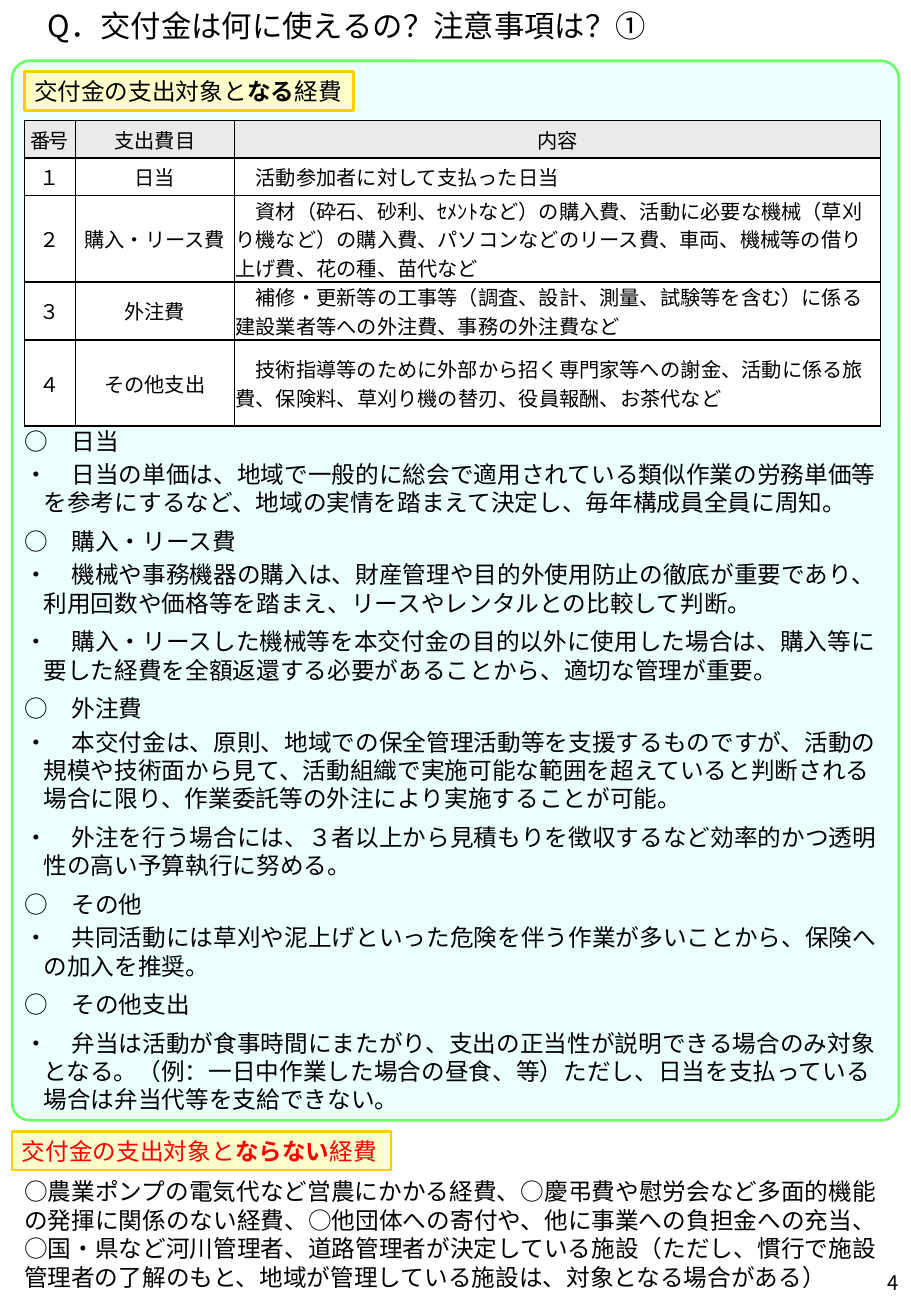
from dataclasses import dataclass

from lxml.etree import SubElement
from pptx import Presentation
from pptx.dml.color import RGBColor
from pptx.enum.shapes import MSO_SHAPE as SHAPE
from pptx.enum.text import MSO_ANCHOR as ANCHOR, MSO_AUTO_SIZE as AUTO, PP_ALIGN as ALIGN
from pptx.oxml.ns import qn
from pptx.util import Inches, Pt

TITLE = "Q．交付金は何に使えるの？注意事項は？①"
PAGE = "4"
LABELS = [
    (0.2, 0.59, 2.71, "black", ("交付金の支出対象と", "なる", "経費")),
    (0.1, 9.31, 3.12, "red", ("交付金の支出対象と", "ならない", "経費")),
]
COSTS = [
    ("番号", "支出費目", "内容"),
    ("１", "日当", "　活動参加者に対して支払った日当"),
    ("２", "購入・リース費", "　資材（砕石、砂利、ｾﾒﾝﾄなど）の購入費、活動に必要な機械（草刈り機など）の購入費、パソコンなどのリース費、車両、機械等の借り上げ費、花の種、苗代など"),
    ("３", "外注費", "　補修・更新等の工事等（調査、設計、測量、試験等を含む）に係る建設業者等への外注費、事務の外注費など"),
    ("４", "その他支出", "　技術指導等のために外部から招く専門家等への謝金、活動に係る旅費、保険料、草刈り機の替刃、役員報酬、お茶代など"),
]
COL_WIDTHS = [0.42, 1.31, 5.32]
ROW_HEIGHTS = [0.31, 0.31, 0.71, 0.47, 0.71]
NOTES = [
    ("○　日当", 3),
    ("・　日当の単価は、地域で一般的に総会で適用されている類似作業の労務単価等を参考にするなど、地域の実情を踏まえて決定し、毎年構成員全員に周知。", 6),
    ("○　購入・リース費", 3),
    ("・　機械や事務機器の購入は、財産管理や目的外使用防止の徹底が重要であり、利用回数や価格等を踏まえ、リースやレンタルとの比較して判断。", 6),
    ("・　購入・リースした機械等を本交付金の目的以外に使用した場合は、購入等に要した経費を全額返還する必要があることから、適切な管理が重要。", 6),
    ("○　外注費", 3),
    ("・　本交付金は、原則、地域での保全管理活動等を支援するものですが、活動の規模や技術面から見て、活動組織で実施可能な範囲を超えていると判断される場合に限り、作業委託等の外注により実施することが可能。", 6),
    ("・　外注を行う場合には、３者以上から見積もりを徴収するなど効率的かつ透明性の高い予算執行に努める。", 6),
    ("○　その他", 3),
    ("・　共同活動には草刈や泥上げといった危険を伴う作業が多いことから、保険への加入を推奨。", 6),
    ("○　その他支出", 6),
    ("・　弁当は活動が食事時間にまたがり、支出の正当性が説明できる場合のみ対象となる。（例：一日中作業した場合の昼食、等）ただし、日当を支払っている場合は弁当代等を支給できない。", 6),
]
EXCLUDED = "○農業ポンプの電気代など営農にかかる経費、○慶弔費や慰労会など多面的機能の発揮に関係のない経費、○他団体への寄付や、他に事業への負担金への充当、○国・県など河川管理者、道路管理者が決定している施設（ただし、慣行で施設管理者の了解のもと、地域が管理している施設は、対象となる場合がある）"


@dataclass(frozen=True)
class Theme:
    font: str = "Noto Sans CJK JP"
    black: str = "000000"
    red: str = "FF0000"
    white: str = "FFFFFF"
    header: str = "EAEAEA"
    panel: str = "EBFFFF"
    panel_line: str = "66FF66"
    label: str = "FFFFCC"
    label_line: str = "FFCC00"
    title_size: float = 18
    body_size: float = 14
    table_size: float = 12
    leading: float = 16.8


T = Theme()


def rgb(color):
    return RGBColor.from_string(color)


def box(left, top, width, height):
    return [Inches(v) for v in (left, top, width, height)]


def style(p, size, color=T.black, align=ALIGN.LEFT, leading=T.leading):
    p.alignment = align
    if leading:
        p.line_spacing = Pt(leading)
    p.font.size = Pt(size)
    p.font.bold = False
    p.font.color.rgb = rgb(color)
    p.font.name = T.font
    SubElement(p.font._element, qn("a:ea"), typeface=T.font)


def set_margins(target, left, top, right, bottom):
    target.margin_left, target.margin_top = Inches(left), Inches(top)
    target.margin_right, target.margin_bottom = Inches(right), Inches(bottom)


def add_panel(s, kind, place, fill, line):
    sp = s.shapes.add_shape(kind, *box(*place))
    sp.shadow.inherit = False
    sp.fill.solid()
    sp.fill.fore_color.rgb = rgb(fill)
    sp.line.color.rgb = rgb(line)
    sp.line.width = Pt(1.5)
    return sp


def add_text(s, place, anchor=ANCHOR.TOP):
    tf = s.shapes.add_textbox(*box(*place)).text_frame
    tf.word_wrap = True
    tf.vertical_anchor = anchor
    return tf


def add_label(s, left, top, width, color, parts):
    sp = add_panel(s, SHAPE.RECTANGLE, (left, top, width, 0.32), T.label, T.label_line)
    tf = sp.text_frame
    tf.word_wrap = True
    tf.vertical_anchor = ANCHOR.MIDDLE
    set_margins(tf, 0.08, 0.04, 0.08, 0.04)
    p = tf.paragraphs[0]
    style(p, T.body_size, getattr(T, color))
    for i, part in enumerate(parts):
        r = p.add_run()
        r.text = part
        r.font.bold = i == 1
        r.font.color.rgb = rgb(getattr(T, color))


def add_borders(cell):
    tc_pr = cell._tc.get_or_add_tcPr()
    for i, side in enumerate(("lnL", "lnR", "lnT", "lnB")):
        ln = SubElement(tc_pr, qn(f"a:{side}"), w=str(Pt(1)))
        fill = SubElement(ln, qn("a:solidFill"))
        SubElement(fill, qn("a:srgbClr"), val=T.black)
        tc_pr.insert(i, ln)


def add_costs(s):
    place = box(0.2, 0.99, sum(COL_WIDTHS), sum(ROW_HEIGHTS))
    table = s.shapes.add_table(len(COSTS), len(COL_WIDTHS), *place).table
    table.first_row = table.horz_banding = False
    for col, width in zip(table.columns, COL_WIDTHS):
        col.width = Inches(width)
    for i, (row, height) in enumerate(zip(table.rows, ROW_HEIGHTS)):
        row.height = Inches(height)
        for j, cell in enumerate(row.cells):
            header = i == 0
            cell.text = COSTS[i][j]
            cell.fill.solid()
            cell.fill.fore_color.rgb = rgb(T.header if header else T.white)
            cell.vertical_anchor = ANCHOR.TOP if header else ANCHOR.MIDDLE
            set_margins(cell, *((0, 0.05, 0, 0) if header else (0.01, 0.01, 0.01, 0)))
            align = ALIGN.CENTER if header or j < 2 else ALIGN.LEFT
            style(cell.text_frame.paragraphs[0], T.table_size, align=align)
            add_borders(cell)
    number_run = table.cell(0, 0).text_frame.paragraphs[0].runs[0]
    number_run.font._element.set("spc", "-150")


def add_notes(s):
    tf = add_text(s, (0.2, 3.51, 7.07, 5.71))
    set_margins(tf, 0, 0, 0, 0)
    for i, (text, after) in enumerate(NOTES):
        p = tf.add_paragraph() if i else tf.paragraphs[0]
        p.text = text
        style(p, T.body_size)
        p.space_after = Pt(after)
        p_pr = p._p.get_or_add_pPr()
        p_pr.set("marL", str(Inches(0.16)))
        p_pr.set("indent", str(-Inches(0.16)))


def main():
    prs = Presentation()
    prs.slide_width, prs.slide_height = Inches(7.5), Inches(10.83)
    s = prs.slides.add_slide(prs.slide_layouts[5])

    title = s.shapes.title
    title.left, title.top, title.width, title.height = box(0.2, -0.06, 5.31, 0.54)
    tf = title.text_frame
    tf.text = TITLE
    tf.auto_size = AUTO.NONE
    tf.vertical_anchor = ANCHOR.MIDDLE
    style(tf.paragraphs[0], T.title_size, align=ALIGN.CENTER, leading=None)

    panel = add_panel(s, SHAPE.ROUNDED_RECTANGLE, (0.1, 0.5, 7.3, 8.72), T.panel, T.panel_line)
    panel.adjustments[0] = 0.02
    add_notes(s)
    add_costs(s)
    for label in LABELS:
        add_label(s, *label)

    tf = add_text(s, (0.1, 9.64, 7.3, 1.04))
    tf.text = EXCLUDED
    style(tf.paragraphs[0], T.body_size)

    tf = add_text(s, (5.81, 10.26, 1.69, 0.58), ANCHOR.MIDDLE)
    tf.text = PAGE
    style(tf.paragraphs[0], T.table_size, align=ALIGN.RIGHT, leading=None)

    prs.save("out.pptx")


if __name__ == "__main__":
    main()
